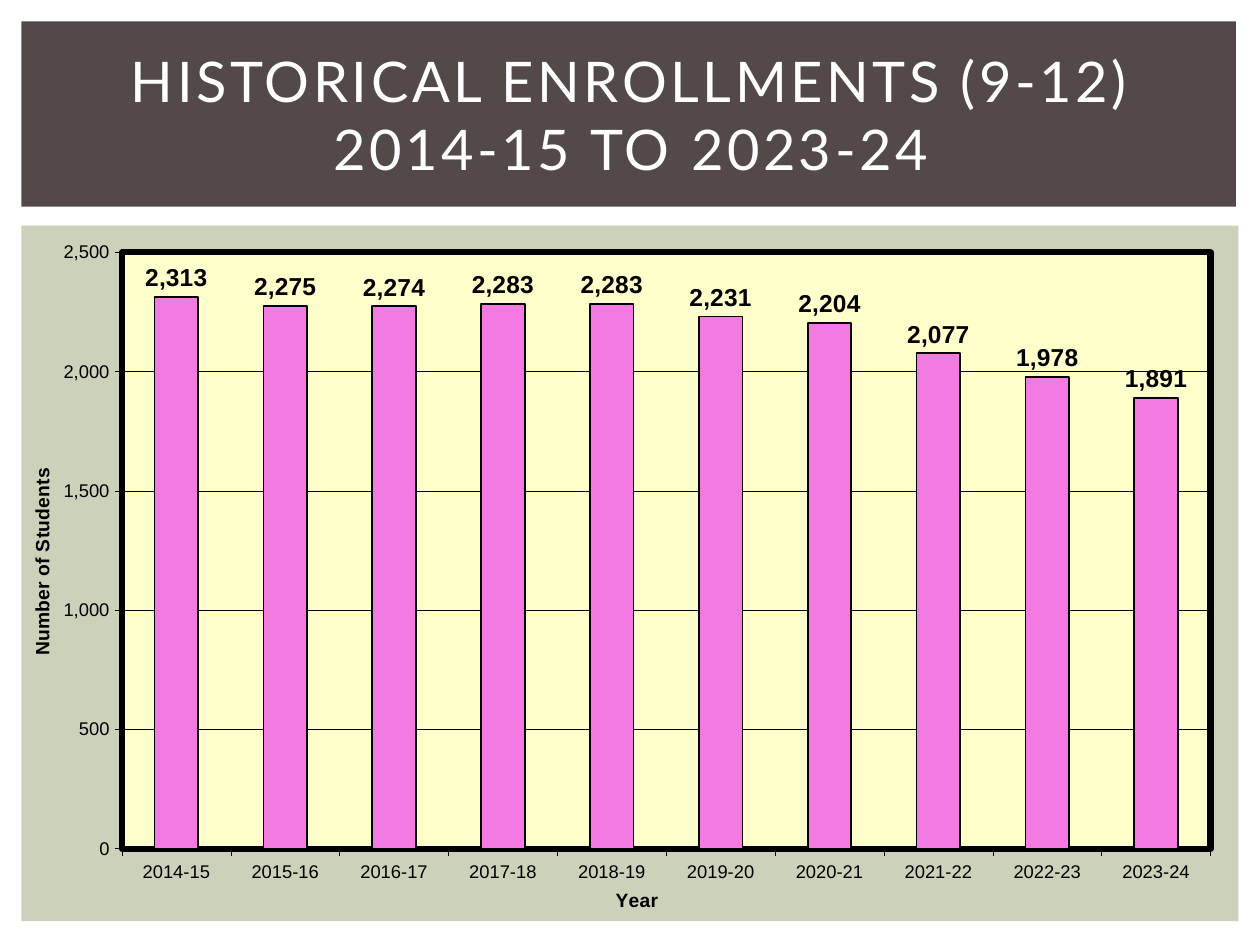
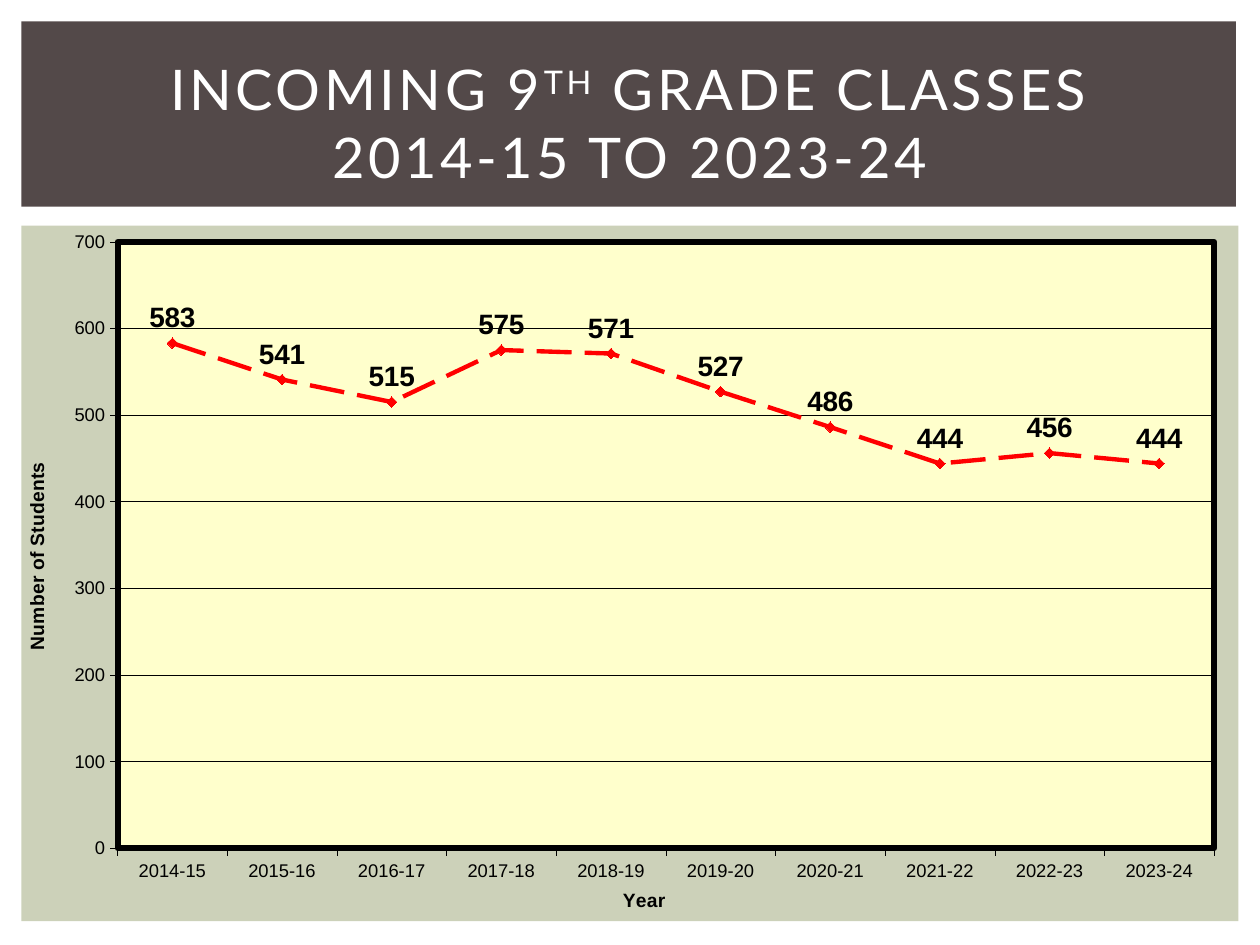
from lxml import etree
from pptx import Presentation
from pptx.chart.data import CategoryChartData
from pptx.dml.color import RGBColor
from pptx.enum.chart import XL_CHART_TYPE as ChartType
from pptx.enum.chart import XL_LABEL_POSITION as LabelPosition
from pptx.enum.chart import XL_MARKER_STYLE as MarkerStyle
from pptx.enum.chart import XL_TICK_MARK as TickMark
from pptx.enum.dml import MSO_LINE_DASH_STYLE as DashStyle
from pptx.enum.shapes import MSO_SHAPE as ShapeType
from pptx.enum.text import MSO_ANCHOR as Anchor
from pptx.enum.text import PP_ALIGN as Align
from pptx.oxml import parse_xml
from pptx.oxml.ns import nsdecls, qn
from pptx.util import Inches, Pt

BLACK = RGBColor(0x00, 0x00, 0x00)
WHITE = RGBColor(0xFF, 0xFF, 0xFF)
BROWN = RGBColor(0x53, 0x49, 0x49)
SAGE = RGBColor(0xCC, 0xD1, 0xB9)
CREAM = RGBColor(0xFF, 0xFF, 0xCC)
PINK = RGBColor(0xF2, 0x7A, 0xE1)
RED = RGBColor(0xFF, 0x00, 0x00)

TITLE_FONT = "Lato"
CHART_FONT = "Arial"
BLANK_LAYOUT = 6
TITLE_BAND = (0.17, 0.17, 9.64, 1.47)
CHART_PANEL = (0.17, 1.79, 9.66, 5.52)
YEARS = [f"{year}-{year % 100 + 1}" for year in range(2014, 2024)]
ENROLLMENTS = [2313, 2275, 2274, 2283, 2283, 2231, 2204, 2077, 1978, 1891]
INCOMING_CLASSES = [583, 541, 515, 575, 571, 527, 486, 444, 456, 444]


def inches(box):
    """Turn a box of inches into lengths."""
    return [Inches(length) for length in box]


def add_panel(slide, box, color):
    """Add a plain filled rectangle."""
    panel = slide.shapes.add_shape(ShapeType.RECTANGLE, *inches(box))
    panel.shadow.inherit = False
    panel.fill.solid()
    panel.fill.fore_color.rgb = color
    panel.line.fill.background()


def style_font(font, size, color=BLACK, bold=False, name=CHART_FONT):
    """Set the face, size, weight and colour of a font."""
    font.name = name
    font.size = Pt(size)
    font.bold = bold
    font.color.rgb = color


def style_line(line, color, width):
    """Set the colour and width of a line."""
    line.color.rgb = color
    line.width = Pt(width)


def add_title(slide, box, lines):
    """Add a centred title; parts between carets are superscript."""
    text_frame = slide.shapes.add_textbox(*inches(box)).text_frame
    text_frame.word_wrap = True
    text_frame.vertical_anchor = Anchor.MIDDLE
    paragraph = text_frame.paragraphs[0]
    paragraph.alignment = Align.CENTER
    for line_number, line in enumerate(lines):
        if line_number:
            paragraph.add_line_break()
        for part_number, part in enumerate(line.split("^")):
            run = paragraph.add_run()
            run.text = part
            style_font(run.font, 32, WHITE, name=TITLE_FONT)
            properties = run.font._element
            properties.set("spc", "200")
            if part_number % 2:
                properties.set("baseline", "30000")


def add_base_slide(presentation, title_box, title_lines):
    """Add a slide with the shared panels and a title."""
    slide = presentation.slides.add_slide(presentation.slide_layouts[BLANK_LAYOUT])
    add_panel(slide, CHART_PANEL, SAGE)
    add_panel(slide, TITLE_BAND, BROWN)
    add_title(slide, title_box, title_lines)
    return slide


def style_plot_area(chart, plot_box):
    """Place the inner plot area, fill it and frame it."""
    plot_area = chart._chartSpace.chart.plotArea
    for layout in plot_area.findall(qn("c:layout")):
        plot_area.remove(layout)
    layout = parse_xml(f"<c:layout {nsdecls('c')}><c:manualLayout/></c:layout>")
    settings = [("layoutTarget", "inner"), ("xMode", "edge"), ("yMode", "edge")]
    settings += zip("xywh", plot_box)
    for name, value in settings:
        etree.SubElement(layout[0], qn(f"c:{name}")).set("val", str(value))
    plot_area.insert(0, layout)
    plot_area.append(parse_xml(
        f"<c:spPr {nsdecls('c', 'a')}>"
        f'<a:solidFill><a:srgbClr val="{CREAM}"/></a:solidFill>'
        f'<a:ln w="{Pt(3.5)}"><a:solidFill><a:srgbClr val="{BLACK}"/></a:solidFill></a:ln>'
        "</c:spPr>"))


def style_axis(axis, title):
    """Give an axis its title, ticks, line and font."""
    axis.has_title = True
    text_frame = axis.axis_title.text_frame
    text_frame.text = title
    style_font(text_frame.paragraphs[0].runs[0].font, 11, bold=True)
    axis.major_tick_mark = TickMark.OUTSIDE
    axis.minor_tick_mark = TickMark.NONE
    style_line(axis.format.line, BLACK, 0.25)
    style_font(axis.tick_labels.font, 10.5)


def style_value_axis(axis, maximum, step):
    """Set the scale, number format and gridlines of the value axis."""
    style_axis(axis, "Number of Students")
    axis.minimum_scale = 0
    axis.maximum_scale = maximum
    axis.major_unit = step
    axis.tick_labels.number_format = "#,##0"
    axis.tick_labels.number_format_is_linked = False
    axis.has_major_gridlines = True
    style_line(axis.major_gridlines.format.line, BLACK, 0.25)


def add_yearly_chart(slide, kind, box, plot_box, values, scale, label_size, label_position):
    """Add a one-series chart of students by year."""
    chart_data = CategoryChartData(number_format="#,##0")
    chart_data.categories = YEARS
    chart_data.add_series("Series 1", values)
    chart = slide.shapes.add_chart(kind, *inches(box), chart_data).chart
    chart.has_title = False
    chart.has_legend = False
    style_font(chart.font, 10.5)
    style_axis(chart.category_axis, "Year")
    style_value_axis(chart.value_axis, *scale)
    style_plot_area(chart, plot_box)
    plot = chart.plots[0]
    plot.vary_by_categories = False
    plot.has_data_labels = True
    labels = plot.data_labels
    labels.show_value = True
    labels.position = label_position
    labels.number_format = "#,##0"
    labels.number_format_is_linked = False
    style_font(labels.font, label_size, bold=True)
    return plot


def style_columns(plot):
    """Colour and space the columns."""
    plot.gap_width = 150
    series_format = plot.series[0].format
    series_format.fill.solid()
    series_format.fill.fore_color.rgb = PINK
    style_line(series_format.line, BLACK, 1)


def style_dashed_line(plot):
    """Draw the series as a dashed line with diamond markers."""
    series = plot.series[0]
    series.smooth = False
    style_line(series.format.line, RED, 2.5)
    series.format.line.dash_style = DashStyle.LONG_DASH
    marker = series.marker
    marker.style = MarkerStyle.DIAMOND
    marker.size = 6
    marker.format.fill.solid()
    marker.format.fill.fore_color.rgb = RED
    style_line(marker.format.line, RED, 0.75)


def main():
    """Build the two enrollment slides."""
    presentation = Presentation()
    presentation.slide_width = Inches(10)
    presentation.slide_height = Inches(7.5)
    period = "2014-15 TO 2023-24"

    slide = add_base_slide(presentation, (0.21, 0.16, 9.6, 1.49),
                           ["HISTORICAL ENROLLMENTS (9-12)", period])
    style_columns(add_yearly_chart(
        slide, ChartType.COLUMN_CLUSTERED, (0.2, 1.84, 9.6, 5.44),
        (0.08, 0.03, 0.9, 0.87), ENROLLMENTS, (2500, 500), 14, LabelPosition.OUTSIDE_END))

    slide = add_base_slide(presentation, (0.19, 0.19, 9.62, 1.56),
                           ["INCOMING 9^TH^ GRADE CLASSES", period])
    style_dashed_line(add_yearly_chart(
        slide, ChartType.LINE_MARKERS, (0.16, 1.81, 9.67, 5.47),
        (0.08, 0.02, 0.9, 0.88), INCOMING_CLASSES, (700, 100), 16, LabelPosition.ABOVE))

    presentation.save("out.pptx")


if __name__ == "__main__":
    main()
